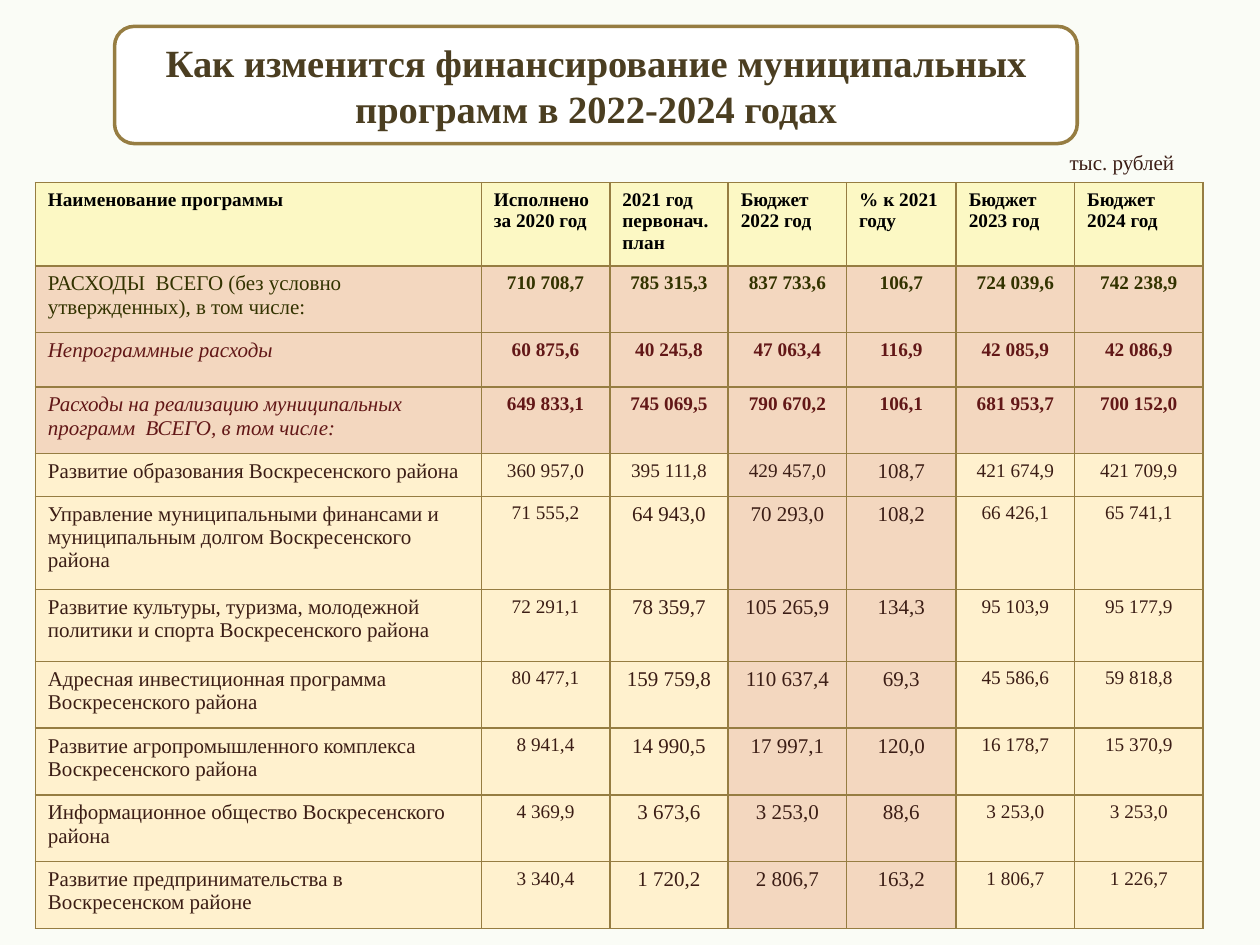
from lxml.etree import SubElement
from pptx import Presentation
from pptx.dml.color import RGBColor
from pptx.enum.shapes import MSO_SHAPE
from pptx.enum.text import MSO_ANCHOR, MSO_AUTO_SIZE, PP_ALIGN
from pptx.oxml.ns import qn
from pptx.util import Inches, Pt

FONT = "Times New Roman"
PAGE_FILL = RGBColor(0xFA, 0xFC, 0xF6)
WHITE = RGBColor(0xFF, 0xFF, 0xFF)
BLACK = RGBColor(0x00, 0x00, 0x00)
GOLD = RGBColor(0x96, 0x7D, 0x42)
TITLE_BROWN = RGBColor(0x4B, 0x3E, 0x21)
TEXT_BROWN = RGBColor(0x3B, 0x1D, 0x15)
OLIVE = RGBColor(0x33, 0x33, 0x00)
MAROON = RGBColor(0x62, 0x17, 0x17)
YELLOW = RGBColor(0xFC, 0xF8, 0xC4)
PEACH = RGBColor(0xF3, 0xD7, 0xBF)
CREAM = RGBColor(0xFF, 0xF1, 0xCE)

COLUMN_WIDTHS = [3.54, 1.02, 0.94, 0.94, 0.87, 0.94, 1.02]
ROW_HEIGHTS = [0.66, 0.53, 0.43, 0.53, 0.34, 0.74, 0.57] + [0.53] * 4

HEADINGS = ["Наименование программы", "Исполнено за 2020 год",
            "2021 год\nпервонач.\nплан", "Бюджет\n2022 год",
            "% к 2021 году", "Бюджет\n2023 год", "Бюджет\n2024 год"]
TOTALS = [
    ["РАСХОДЫ  ВСЕГО (без условно утвержденных), в том числе:",
     "710 708,7", "785 315,3", "837 733,6", "106,7", "724 039,6", "742 238,9"],
    ["Непрограммные расходы",
     "60 875,6", "40 245,8", "47 063,4", "116,9", "42 085,9", "42 086,9"],
    ["Расходы на реализацию муниципальных программ  ВСЕГО, в том числе:",
     "649 833,1", "745 069,5", "790 670,2", "106,1", "681 953,7", "700 152,0"],
]
PROGRAMS = [
    ["Развитие образования Воскресенского района",
     "360 957,0", "395 111,8", "429 457,0", "108,7", "421 674,9", "421 709,9"],
    ["Управление муниципальными финансами и муниципальным долгом "
     "Воскресенского района",
     "71 555,2", "64 943,0", "70 293,0", "108,2", "66 426,1", "65 741,1"],
    ["Развитие культуры, туризма, молодежной политики и спорта "
     "Воскресенского района",
     "72 291,1", "78 359,7", "105 265,9", "134,3", "95 103,9", "95 177,9"],
    ["Адресная инвестиционная программа Воскресенского района",
     "80 477,1", "159 759,8", "110 637,4", "69,3", "45 586,6", "59 818,8"],
    ["Развитие агропромышленного комплекса Воскресенского района",
     "8 941,4", "14 990,5", "17 997,1", "120,0", "16 178,7", "15 370,9"],
    ["Информационное общество Воскресенского района",
     "4 369,9", "3 673,6", "3 253,0", "88,6", "3 253,0", "3 253,0"],
    ["Развитие предпринимательства в Воскресенском районе",
     "3 340,4", "1 720,2", "2 806,7", "163,2", "1 806,7", "1 226,7"],
]


def write(frame, text, size=12, color=TEXT_BROWN, bold=False, italic=False,
          align=PP_ALIGN.LEFT):
    frame.text = text
    frame.word_wrap = True
    for para in frame.paragraphs:
        para.alignment = align
        for span in para.runs:
            font = span.font
            font.name, font.size, font.color.rgb = FONT, Pt(size), color
            font.bold, font.italic = bold, italic


def place(shape, left, top, width, height):
    shape.left, shape.top = Inches(left), Inches(top)
    shape.width, shape.height = Inches(width), Inches(height)


def add_title(page, text, area):
    # Rounded panel, sent behind the title placeholder
    panel = page.shapes.add_shape(MSO_SHAPE.ROUNDED_RECTANGLE,
                                  *[Inches(length) for length in area])
    panel.shadow.inherit = False
    panel.fill.solid()
    panel.fill.fore_color.rgb = WHITE
    panel.line.color.rgb = GOLD
    panel.line.width = Pt(2)
    title = page.shapes.title
    title.element.addprevious(panel.element)
    place(title, *area)
    frame = title.text_frame
    frame.auto_size = MSO_AUTO_SIZE.NONE
    frame.vertical_anchor = MSO_ANCHOR.MIDDLE
    write(frame, text, size=22, color=TITLE_BROWN, bold=True,
          align=PP_ALIGN.CENTER)


def add_label(page, text, area):
    box = page.shapes.add_textbox(*[Inches(length) for length in area])
    write(box.text_frame, text)


def outline_cell(cell):
    properties = cell._tc.get_or_add_tcPr()
    for position, side in enumerate(("a:lnL", "a:lnR", "a:lnT", "a:lnB")):
        line = SubElement(properties, qn(side), w=str(Pt(1)))
        fill = SubElement(line, qn("a:solidFill"))
        SubElement(fill, qn("a:srgbClr"), val=str(GOLD))
        properties.insert(position, line)


def fill_row(table, row, texts, fills, formats):
    for column, text in enumerate(texts):
        cell = table.cell(row, column)
        write(cell.text_frame, text, **formats[column])
        cell.fill.solid()
        cell.fill.fore_color.rgb = fills[column]
        outline_cell(cell)


def add_budget_table(page, left, top):
    frame = page.shapes.add_table(
        len(ROW_HEIGHTS), len(COLUMN_WIDTHS), Inches(left), Inches(top),
        Inches(sum(COLUMN_WIDTHS)), Inches(sum(ROW_HEIGHTS)))
    table = frame.table
    table.horz_banding = False
    for column, width in zip(table.columns, COLUMN_WIDTHS):
        column.width = Inches(width)
    for row, height in zip(table.rows, ROW_HEIGHTS):
        row.height = Inches(height)

    # Heading row
    heading = dict(size=11, color=BLACK, bold=True)
    fill_row(table, 0, HEADINGS, [YELLOW] * 7, [heading] * 7)

    # Total rows: the first is upright olive, the others italic maroon
    for row, texts in enumerate(TOTALS, 1):
        color = OLIVE if row == 1 else MAROON
        name = dict(color=color, italic=row > 1)
        value = dict(size=11, color=color, bold=True, align=PP_ALIGN.CENTER)
        fill_row(table, row, texts, [PEACH] * 7, [name] + [value] * 6)

    # Program rows: the 2022 budget and its growth are highlighted
    fills = [CREAM] * 3 + [PEACH] * 2 + [CREAM] * 2
    small = dict(size=11, align=PP_ALIGN.CENTER)
    large = dict(size=12, align=PP_ALIGN.CENTER)
    for row, texts in enumerate(PROGRAMS, 1 + len(TOTALS)):
        plan = small if texts is PROGRAMS[0] else large
        formats = [{}, small, plan, plan, large, small, small]
        fill_row(table, row, texts, fills, formats)


def main():
    deck = Presentation()
    deck.slide_width, deck.slide_height = Inches(10), Inches(7.5)
    page = deck.slides.add_slide(deck.slide_layouts[5])
    page.background.fill.solid()
    page.background.fill.fore_color.rgb = PAGE_FILL

    add_title(page, "Как изменится финансирование муниципальных "
                    "программ в 2022-2024 годах", (0.91, 0.21, 7.64, 0.93))
    add_budget_table(page, 0.28, 1.45)
    add_label(page, "тыс. рублей", (8.39, 1.14, 1.1, 0.3))
    deck.save("out.pptx")


if __name__ == "__main__":
    main()
